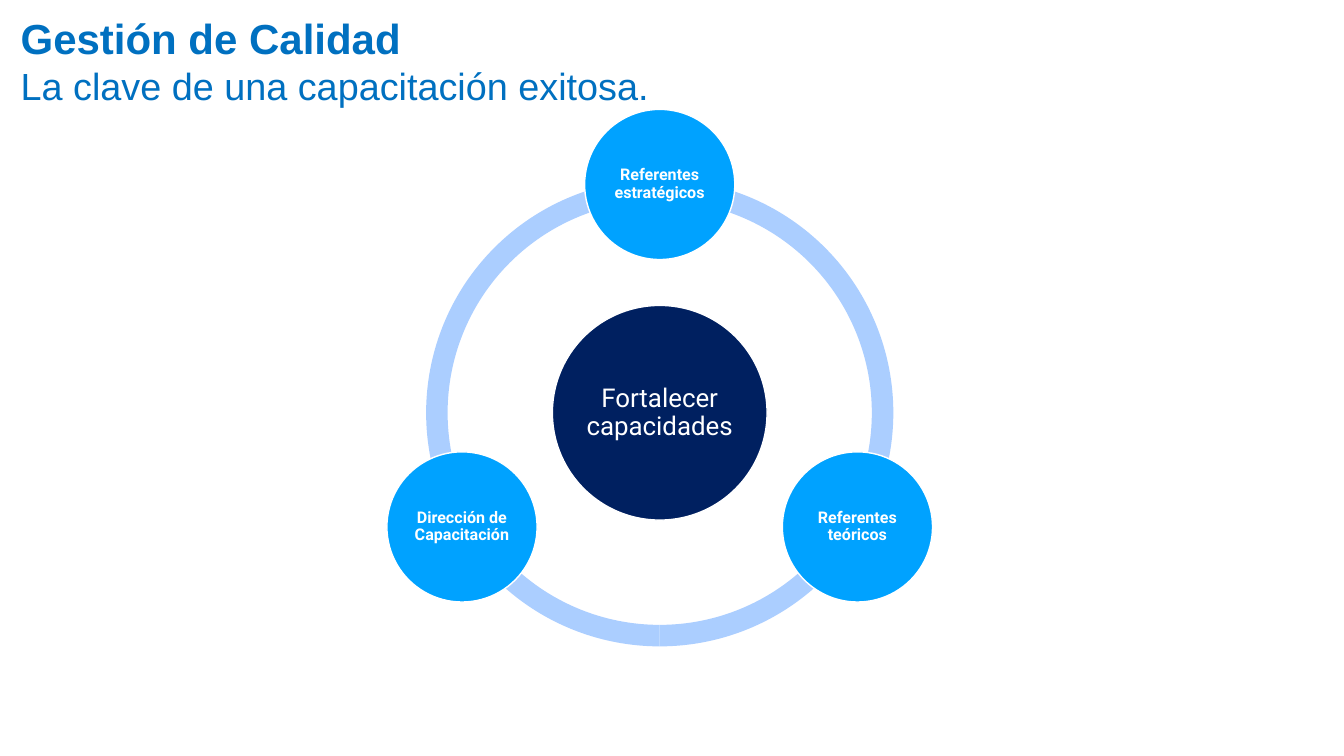
import math

import pptx
import pptx.dml.color
import pptx.enum.shapes
import pptx.enum.text
import pptx.util

RGBColor = pptx.dml.color.RGBColor
MSO_SHAPE = pptx.enum.shapes.MSO_SHAPE

TITLE_BLUE = RGBColor(0x00, 0x70, 0xC0)
RING_BLUE = RGBColor(0xAB, 0xCE, 0xFF)
CORE_NAVY = RGBColor(0x00, 0x20, 0x60)
NODE_BLUE = RGBColor(0x00, 0xA2, 0xFF)
WHITE = RGBColor(0xFF, 0xFF, 0xFF)

# Lengths are in cells of an 80 x 45 grid
COLUMNS, ROWS = 80, 45
CYCLE_CENTRE = (39.27, 24.57)
RING_SIZE, CORE_SIZE, NODE_SIZE = 27.81, 12.78, 8.94
ORBIT_RADIUS = 13.59


class CycleSlide:
    """Style and drawing methods for the current slide."""

    title_font, label_font = "Arial", "Roboto"

    def __init__(self, presentation):
        self.column = presentation.slide_width / COLUMNS
        self.row = presentation.slide_height / ROWS
        self.slide = presentation.slides.add_slide(presentation.slide_layouts[5])
        self.cycle = self.slide.shapes.add_group_shape()

    def box(self, left, top, width, height):
        return (round(left * self.column), round(top * self.row),
                round(width * self.column), round(height * self.row))

    def run(self, paragraph, text, font, size, color, bold=False):
        run = paragraph.add_run()
        run.text = text
        run.font.name = font
        run.font.size = pptx.util.Pt(size)
        run.font.bold = bold
        run.font.color.rgb = color

    def title(self, heading, subheading, *area):
        title = self.slide.shapes.title
        title.left, title.top, title.width, title.height = self.box(*area)
        frame = title.text_frame
        frame.word_wrap = True
        frame.auto_size = pptx.enum.text.MSO_AUTO_SIZE.NONE
        frame.vertical_anchor = pptx.enum.text.MSO_ANCHOR.TOP
        paragraph = frame.paragraphs[0]
        paragraph.alignment = pptx.enum.text.PP_ALIGN.LEFT
        self.run(paragraph, heading, self.title_font, 60, TITLE_BLUE, True)
        paragraph.add_line_break()
        self.run(paragraph, subheading, self.title_font, 54, TITLE_BLUE)

    def round_shape(self, kind, centre, size, fill):
        x, y = centre
        shape = self.cycle.shapes.add_shape(
            kind, *self.box(x - size / 2, y - size / 2, size, size))
        shape.shadow.inherit = False
        shape.fill.solid()
        shape.fill.fore_color.rgb = fill
        return shape

    def arc(self, start, end):
        arc = self.round_shape(MSO_SHAPE.BLOCK_ARC, CYCLE_CENTRE, RING_SIZE, RING_BLUE)
        arc.line.fill.background()
        # Angles are stored in 60000ths of a degree, adjustments in 100000ths
        arc.adjustments[0] = start * 0.6
        arc.adjustments[1] = end * 0.6
        arc.adjustments[2] = 0.046

    def circle(self, text, centre, diameter, fill, size, inset, bold=False):
        circle = self.round_shape(MSO_SHAPE.OVAL, centre, diameter, fill)
        circle.line.color.rgb = WHITE
        circle.line.width = pptx.util.Pt(2)
        frame = circle.text_frame
        frame.word_wrap = True
        frame.vertical_anchor = pptx.enum.text.MSO_ANCHOR.MIDDLE
        frame.margin_left = frame.margin_right = round(inset * self.column)
        frame.margin_top = frame.margin_bottom = round(inset * self.row)
        paragraph = frame.paragraphs[0]
        paragraph.alignment = pptx.enum.text.PP_ALIGN.CENTER
        paragraph.line_spacing = 0.9
        self.run(paragraph, text, self.label_font, size, WHITE, bold)


def main():
    presentation = pptx.Presentation()
    presentation.slide_width = pptx.util.Inches(26.67)
    presentation.slide_height = pptx.util.Inches(15)
    page = CycleSlide(presentation)

    # Heading
    page.title("Gestión de Calidad", "La clave de una capacitación exitosa.",
               0.93, 0.57, 78.84, 31.23)

    # Ring
    for start, end in ((90, 162), (18, 90), (162, 18)):
        page.arc(start, end)

    # Core
    page.circle("Fortalecer capacidades", CYCLE_CENTRE, CORE_SIZE, CORE_NAVY, 37, 0.15)

    # Nodes, clockwise from the top
    nodes = ("Referentes estratégicos", "Referentes teóricos",
             "Dirección de Capacitación")
    for index, node in enumerate(nodes):
        angle = math.tau * index / len(nodes)
        centre = (CYCLE_CENTRE[0] + ORBIT_RADIUS * math.sin(angle),
                  CYCLE_CENTRE[1] - ORBIT_RADIUS * math.cos(angle))
        page.circle(node, centre, NODE_SIZE, NODE_BLUE, 23, 0.09, True)

    presentation.save("out.pptx")


if __name__ == "__main__":
    main()
